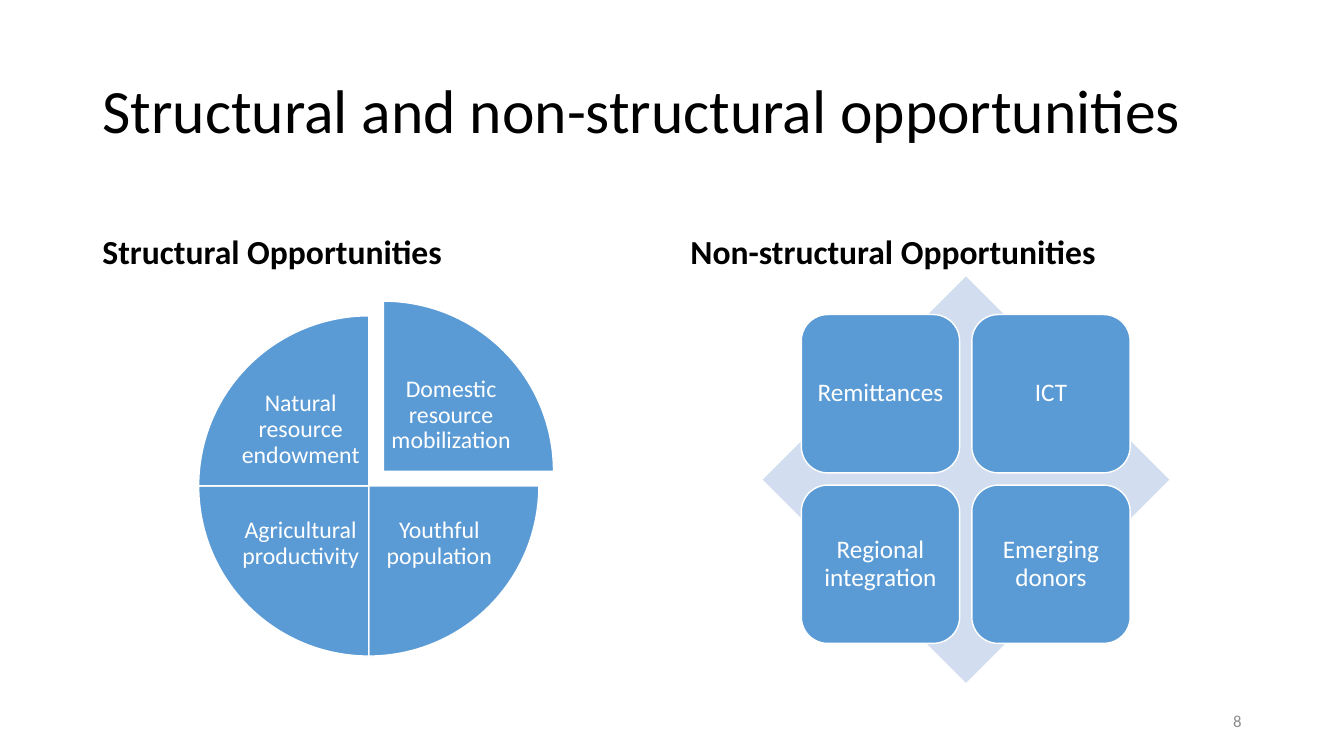
from dataclasses import dataclass

from pptx import Presentation
from pptx.dml.color import RGBColor
from pptx.enum.shapes import MSO_SHAPE
from pptx.enum.text import MSO_ANCHOR, MSO_AUTO_SIZE, PP_ALIGN
from pptx.util import Inches, Pt

# The slide is a grid of 160 columns by 90 rows with square cells
WIDTH, HEIGHT = Inches(13.3333), Inches(7.5)
CELL = HEIGHT / 90
BLUE, PALE, WHITE, BLACK, GREY = "5B9BD5", "D2DEEF", "FFFFFF", "000000", "8C8C8C"


@dataclass
class Box:
    col: float
    row: float
    cols: float
    rows: float

    def place(self) -> tuple[int, ...]:
        return tuple(round(n * CELL) for n in (self.col, self.row, self.cols, self.rows))


@dataclass
class Style:
    size: float
    color: str = WHITE
    bold: bool = False
    align: PP_ALIGN = PP_ALIGN.CENTER
    anchor: MSO_ANCHOR = MSO_ANCHOR.MIDDLE
    inset: tuple[float, float] = (0.1, 0.05)
    spacing: float = 0.9
    before: float = 0


@dataclass
class Slice:
    text: str
    start: int
    col: float
    row: float
    shift: float = 0


@dataclass
class Tile:
    text: str
    across: int
    down: int


def paint(color: str) -> RGBColor:
    return RGBColor.from_string(color)


def write(shape, text: str, style: Style) -> None:
    frame = shape.text_frame
    frame.text = text
    frame.word_wrap = True
    frame.auto_size = MSO_AUTO_SIZE.NONE
    frame.vertical_anchor = style.anchor
    frame.margin_left = frame.margin_right = Inches(style.inset[0])
    frame.margin_top = frame.margin_bottom = Inches(style.inset[1])
    line = frame.paragraphs[0]
    line.alignment = style.align
    line.line_spacing = style.spacing
    line.space_before = Pt(style.before)
    font = line.runs[0].font
    font.name, font.size, font.bold = "Calibri", Pt(style.size), style.bold
    font.color.rgb = paint(style.color)


def draw(kind: MSO_SHAPE, box: Box, fill: str, edge: str | None = WHITE):
    shape = slide.shapes.add_shape(kind, *box.place())
    shape.shadow.inherit = False
    shape.fill.solid()
    shape.fill.fore_color.rgb = paint(fill)
    if edge:
        shape.line.color.rgb = paint(edge)
        shape.line.width = Pt(1)
    else:
        shape.line.fill.background()
    return shape


def label(box: Box, text: str, style: Style) -> None:
    write(slide.shapes.add_textbox(*box.place()), text, style)


def fill_holder(index: int, box: Box, text: str, style: Style) -> None:
    holder = slide.placeholders[index]
    holder.left, holder.top, holder.width, holder.height = box.place()
    write(holder, text, style)


deck = Presentation()
deck.slide_width, deck.slide_height = WIDTH, HEIGHT
slide = deck.slides.add_slide(deck.slide_layouts.get_by_name("Comparison"))

# Title and column headings
head = Style(24, BLACK, True, PP_ALIGN.LEFT, MSO_ANCHOR.BOTTOM, before=10)
fill_holder(0, Box(11, 4.8, 138, 17.4), "Structural and non-structural opportunities",
            Style(44, BLACK, align=PP_ALIGN.LEFT))
fill_holder(1, Box(11, 22.1, 67.7, 10.8), "Structural Opportunities", head)
fill_holder(3, Box(81, 22.1, 68, 10.8), "Non-structural Opportunities", head)
for index in (2, 4):
    spare = slide.placeholders[index].element
    spare.getparent().remove(spare)

# Pie of four quarters, the first one pulled out
SLICES = [
    Slice("Domestic resource mobilization", 270, 46.2, 43.4, 1.75),
    Slice("Youthful population", 0, 44.8, 58.7),
    Slice("Agricultural productivity", 90, 28.3, 58.7),
    Slice("Natural resource endowment", 180, 28.3, 45.1),
]
for part in SLICES:
    pie = draw(MSO_SHAPE.PIE, Box(23.65 + part.shift, 37.6 - part.shift, 40.5, 40.5), BLUE)
    # Angles are in units of 100000 / 60000 degrees
    pie.adjustments[0] = part.start * 0.6
    pie.adjustments[1] = (part.start + 90) % 360 * 0.6
    label(Box(part.col, part.row, 15, 12.1), part.text, Style(17, inset=(0.02, 0.02)))

# Diamond with a two by two set of tiles
SIDE, STEP = 18.85, 20.3
TILES = [
    Tile("Remittances", 0, 0),
    Tile("ICT", 1, 0),
    Tile("Regional integration", 0, 1),
    Tile("Emerging donors", 1, 1),
]
draw(MSO_SHAPE.DIAMOND, Box(90.8, 32.9, 48.4, 48.4), PALE, None)
for tile in TILES:
    box = Box(95.4 + tile.across * STEP, 37.45 + tile.down * STEP, SIDE, SIDE)
    write(draw(MSO_SHAPE.ROUNDED_RECTANGLE, box, BLUE), tile.text,
          Style(18, inset=(0.07, 0.07)))

# Slide number
label(Box(113, 83.4, 36, 4.8), "8", Style(12, GREY, align=PP_ALIGN.RIGHT, spacing=1))

deck.save("out.pptx")
